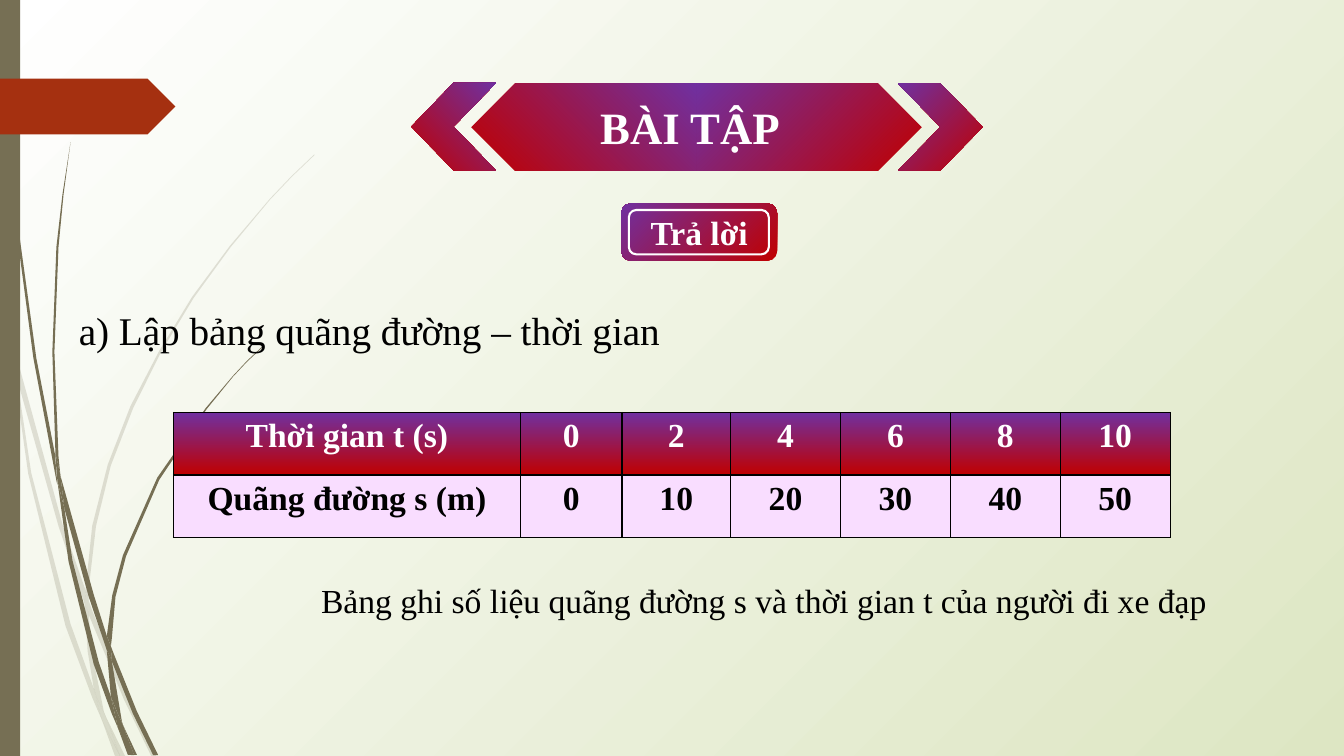
from dataclasses import dataclass

import pptx
import pptx.dml.color
import pptx.enum.shapes
import pptx.enum.text
import pptx.oxml
import pptx.oxml.ns
import pptx.util

Pt = pptx.util.Pt
qn = pptx.oxml.ns.qn
KIND = pptx.enum.shapes.MSO_SHAPE
ALIGN = pptx.enum.text.PP_ALIGN
ANCHOR = pptx.enum.text.MSO_ANCHOR


@dataclass
class Theme:
    font: str = "Times New Roman"
    white: str = "FFFFFF"
    black: str = "000000"
    leaf: str = "DDE6C3"
    stem: str = "766F54"
    rust: str = "A53010"
    red: str = "C00000"
    plum: str = "7030A0"
    pink: str = "F9DDFF"
    head: int = 32
    body: int = 28
    small: int = 24


THEME = Theme()

# Outlines of the grass blades, in points
PALE = [
    [(7.9, 252), (6.5, 231.8), (0, 203), (0, 215.3), (7.2, 247.7)],
    [(41.8, 375.8), (60.5, 431.3), (61.2, 421.9), (44.6, 374.4), (10.1, 248.4), (12.2, 270.7)],
    [(66.2, 437), (63.4, 429.1), (63.4, 439.2), (88.6, 499.7), (108, 540), (111.6, 540),
     (91.4, 498.2)],
    [(85.7, 540), (89.3, 540), (75.6, 511.9)],
    [(67, 491.8), (50.4, 445.7), (22.3, 337.7), (12.2, 270.7), (7.9, 252), (20.2, 338.4),
     (46.8, 447.1), (66.2, 499), (72.7, 514.1), (71.3, 509)],
    [(60.5, 431.3), (62.6, 465.1), (67, 491.8), (69.1, 498.2), (75.6, 511.9), (74.2, 508.3),
     (65.5, 465.1), (63.4, 439.2), (63.4, 437.8)],
    [(63.4, 420.5), (68.6, 375.8), (79.2, 332.6), (95.3, 291.2), (115.2, 251.3),
     (138.4, 212.8), (164.9, 176.4), (193, 142.6), (208.8, 126), (224.6, 110.9),
     (224.6, 110.2), (208.1, 126), (193, 141.8), (164.2, 175.7), (137.3, 212),
     (113.8, 250.6), (93.2, 290.2), (77, 331.9), (65.9, 375.7), (61.2, 420.5),
     (61.2, 421.9), (63.4, 429.1)],
    [(72.7, 514.1), (82.1, 540), (85.7, 540)],
    [(63.4, 437.8), (63.4, 439.2), (63.4, 429.1), (61.2, 421.9), (60.5, 431.3)],
    [(69.1, 498.2), (67, 491.8), (71.3, 509), (72.7, 514.1), (85.7, 540), (75.6, 511.9)],
]
DARK = [
    [(5, 79.2), (12.2, 167.8), (23.8, 255.6), (40.3, 343.4), (41, 346.3), (39.6, 329),
     (39.6, 326.2), (25.9, 255.6), (13.7, 167), (5.8, 78.5), (3.6, 34.6), (2.9, 0),
     (2.2, 0), (2.9, 34.6)],
    [(63.4, 426.2), (76.3, 464.4), (76.3, 455.8), (76.3, 454.3), (67, 424.8),
     (43.2, 339.8), (46.1, 363.6)],
    [(81.4, 467.3), (79.2, 461.5), (79.9, 472.3), (95, 509.8), (109.4, 539.3),
     (113, 539.3), (97.9, 508.3)],
    [(79.2, 497.5), (70.6, 473), (51.8, 400.3), (46.1, 363.6), (41, 343.4), (49, 401),
     (67, 474.5), (79.9, 509.8), (84.2, 519.8), (83.5, 516.2)],
    [(43.2, 339.8), (41.8, 326.2), (38.9, 251.3), (41.8, 176.4), (45.4, 139),
     (50.4, 101.5), (44.6, 139), (40.3, 176.4), (37.4, 251.3), (39.6, 323.3)],
    [(95.8, 539.3), (97.9, 539.3), (87.8, 517.7)],
    [(41, 343.4), (46.1, 363.6), (43.2, 339.8), (39.6, 323.3), (39.6, 326.2)],
    [(79.9, 455.8), (82.5, 426.3), (90, 397.4), (113.8, 342.7), (147.6, 292.3),
     (166.3, 269.3), (176.4, 258.5), (187.9, 247.7), (187.2, 247.7), (176.4, 257.8),
     (166.3, 268.6), (146.9, 291.6), (112.3, 341.3), (87.8, 396.7), (80.2, 425.2),
     (76.3, 454.3), (79.2, 461.5)],
    [(84.2, 519.8), (91.4, 539.3), (94.3, 539.3)],
    [(76.3, 464.4), (79.2, 497.5), (83.5, 508.3), (87.8, 517.7), (87.1, 515.5),
     (79.9, 472.3), (78.5, 468.7)],
    [(76.3, 464.4), (78.5, 468.7), (79.9, 472.3), (79.2, 461.5), (76.3, 454.3)],
    [(83.5, 508.3), (79.2, 497.5), (83.5, 516.2), (84.2, 519.8), (93.6, 539.3),
     (95.8, 539.3), (87.8, 517.7)],
]

TIMES = [0, 2, 4, 6, 8, 10]
ROADS = [0, 10, 20, 30, 40, 50]


def rgb(hue):
    return pptx.dml.color.RGBColor.from_string(hue)


def solid(fill, hue):
    fill.solid()
    fill.fore_color.rgb = rgb(hue)


def blend(fill, start, end, angle):
    fill.gradient()
    fill.gradient_angle = angle
    for stop, hue, place in zip(fill.gradient_stops, (start, end), (0, 1)):
        stop.color.rgb = rgb(hue)
        stop.position = place


def write(frame, text, size=THEME.small, hue=THEME.black, bold=False, align=ALIGN.LEFT):
    para = frame.paragraphs[0]
    para.text = text
    para.alignment = align
    font = para.font
    font.name, font.size, font.bold = THEME.font, Pt(size), bold
    font.color.rgb = rgb(hue)


def label(slide, box, text, **form):
    frame = slide.shapes.add_textbox(*map(Pt, box)).text_frame
    frame.word_wrap = True
    write(frame, text, **form)


def block(slide, kind, box, hue=None, flip=False):
    """Add a borderless shape, in one hue or the red to plum blend."""
    shape = slide.shapes.add_shape(kind, *map(Pt, box))
    shape.shadow.inherit = False
    shape.line.fill.background()
    if hue:
        solid(shape.fill, hue)
    else:
        blend(shape.fill, THEME.red, THEME.plum, 135)
    if flip:
        shape.element.spPr.find(qn("a:xfrm")).set("flipH", "1")
    return shape


def blade(slide, spots, alpha=100):
    edge = [(Pt(x), Pt(y)) for x, y in spots]
    pen = slide.shapes.build_freeform(*edge[0], scale=1.0)
    pen.add_line_segments(edge[1:], close=True)
    shape = pen.convert_to_shape()
    shape.shadow.inherit = False
    shape.line.fill.background()
    solid(shape.fill, THEME.stem)
    if alpha < 100:
        tint = shape.element.spPr.find(qn("a:solidFill"))[0]
        tint.append(pptx.oxml.parse_xml(
            f'<a:alpha {pptx.oxml.ns.nsdecls("a")} val="{alpha * 1000}"/>'))


def border(cell):
    props = cell._tc.get_or_add_tcPr()
    for i, side in enumerate("LRTB"):
        props.insert(i, pptx.oxml.parse_xml(
            f'<a:ln{side} {pptx.oxml.ns.nsdecls("a")} w="{Pt(1)}"><a:solidFill>'
            f'<a:srgbClr val="{THEME.black}"/></a:solidFill></a:ln{side}>'))


def grid(slide, left, top, wides, tall, rows):
    table = slide.shapes.add_table(
        len(rows), len(wides), Pt(left), Pt(top), Pt(sum(wides)), Pt(tall * len(rows))).table
    table.horz_banding = False
    for col, wide in zip(table.columns, wides):
        col.width = Pt(wide)
    for r, row in enumerate(rows):
        table.rows[r].height = Pt(tall)
        for c, value in enumerate(row):
            cell = table.cell(r, c)
            cell.margin_left = cell.margin_right = Pt(7.5)
            cell.margin_top = cell.margin_bottom = Pt(4)
            if r == 0:
                blend(cell.fill, THEME.plum, THEME.red, 270)
            else:
                solid(cell.fill, THEME.pink)
            border(cell)
            write(cell.text_frame, str(value), bold=True, align=ALIGN.CENTER,
                  hue=THEME.black if r else THEME.white)


def backdrop(slide):
    blend(slide.background.fill, THEME.white, THEME.leaf, 0)
    line = next(slide.element.iter(qn("a:lin")))
    line.getparent().replace(line, pptx.oxml.parse_xml(
        f'<a:path {pptx.oxml.ns.nsdecls("a")} path="circle">'
        '<a:fillToRect r="100000" b="100000"/></a:path>'))
    for spots in PALE:
        blade(slide, spots, alpha=20)
    for spots in DARK:
        blade(slide, spots)
    block(slide, KIND.RECTANGLE, (0, 0, 14.4, 540), THEME.stem)
    block(slide, KIND.PENTAGON, (0, 56.2, 125.3, 39.8), THEME.rust)


def banner(slide, text):
    block(slide, KIND.CHEVRON, (641.5, 59.6, 60.5, 62.2))
    block(slide, KIND.CHEVRON, (293.8, 59.2, 60.5, 62.6), flip=True)
    block(slide, KIND.PENTAGON, (497.5, 59.6, 160.6, 62.4))
    block(slide, KIND.PENTAGON, (337, 59.6, 160.6, 62.4), flip=True)
    title = slide.shapes.title
    title.left, title.top, title.width, title.height = map(Pt, (421.5, 67.7, 152, 46))
    title.text_frame.vertical_anchor = ANCHOR.TOP
    write(title.text_frame, text, size=THEME.head, hue=THEME.white, bold=True)
    slide.shapes.element.append(title.element)  # bring to front


def badge(slide, text):
    plate = block(slide, KIND.ROUNDED_RECTANGLE, (443.8, 145.3, 111.3, 41))
    plate.text_frame.vertical_anchor = ANCHOR.MIDDLE
    write(plate.text_frame, text, hue=THEME.white, bold=True, align=ALIGN.CENTER)
    ring = block(slide, KIND.ROUNDED_RECTANGLE, (449.2, 150, 100, 31.7), THEME.white)
    ring.fill.background()
    ring.line.color.rgb = rgb(THEME.white)
    ring.line.width = Pt(1.5)


def main():
    deck = pptx.Presentation()
    deck.slide_width, deck.slide_height = Pt(960), Pt(540)
    slide = deck.slides.add_slide(deck.slide_layouts[5])
    # Background and grass
    backdrop(slide)
    # Answer badge, data table and captions
    badge(slide, "Trả lời")
    grid(slide, 123.9, 294.6, [247.8, 72.6, 77.6] + [78.5] * 4, 44.7,
         [["Thời gian t (s)", *TIMES], ["Quãng đường s (m)", *ROADS]])
    label(slide, (222.3, 410.8, 654, 36),
          "Bảng ghi số liệu quãng đường s và thời gian t của người đi xe đạp")
    label(slide, (49.2, 215.6, 553, 41),
          "a) Lập bảng quãng đường – thời gian", size=THEME.body)
    # Title banner
    banner(slide, "BÀI TẬP")
    deck.save("out.pptx")


if __name__ == "__main__":
    main()
